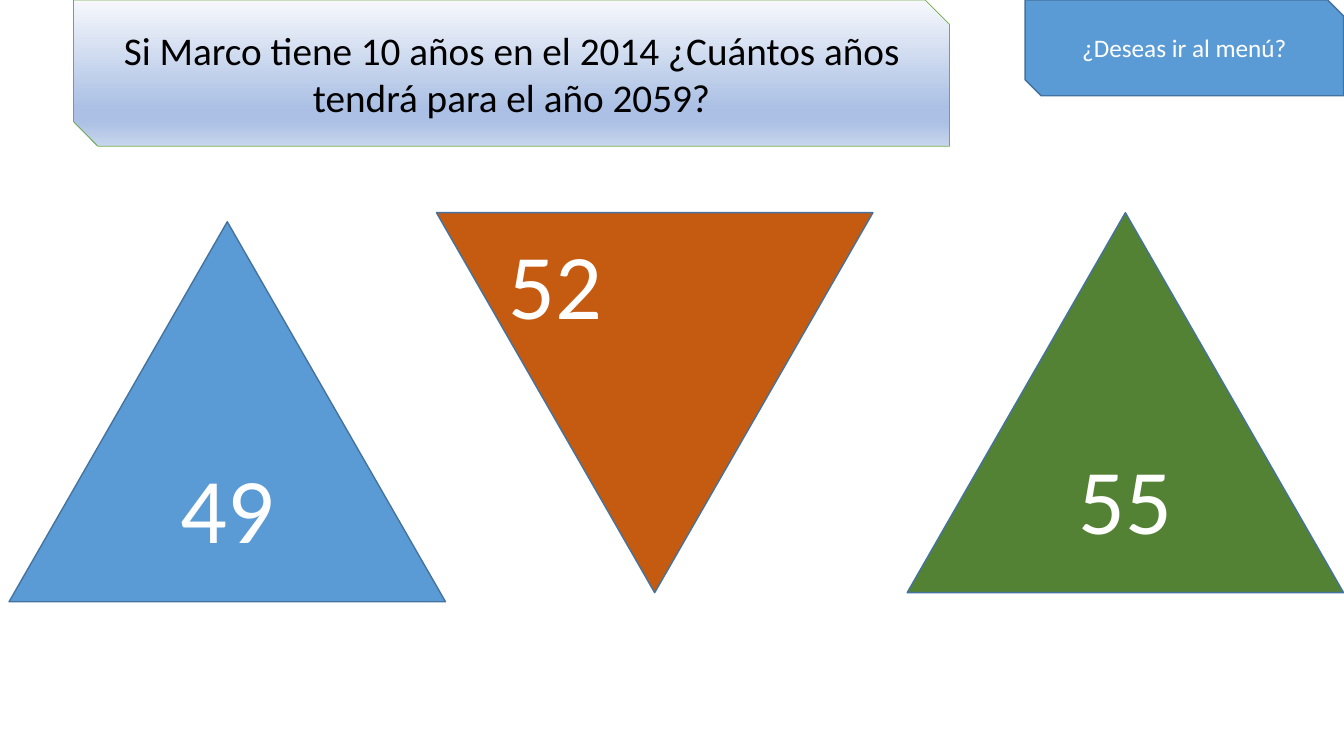
"""Build a multiple-choice question slide with three triangular answers."""
from copy import deepcopy
from dataclasses import dataclass

from pptx import Presentation
from pptx.dml.color import RGBColor
from pptx.enum.shapes import MSO_SHAPE
from pptx.enum.text import MSO_ANCHOR, MSO_AUTO_SIZE, PP_ALIGN
from pptx.oxml.ns import qn
from pptx.shapes.autoshape import Shape
from pptx.slide import Slide
from pptx.text.text import TextFrame
from pptx.util import Pt

FONT = "Calibri"
WHITE = "FFFFFF"
BLUE = "5B9BD5"
OUTLINE = "43739E"
ANSWER_SIZE = 66
TRIANGLE_WIDTH, TRIANGLE_HEIGHT = 311.76, 271.44
QUESTION_STOPS = ((0, "F6F8FC"), (0.74, "ABC0E4"), (0.83, "ABC0E4"), (1, "C7D5ED"))


@dataclass(frozen=True)
class Panel:
    """A filled shape with an optional centred label."""

    preset: MSO_SHAPE
    left: float
    top: float
    width: float
    height: float
    fill: str
    label: str = ""
    size: float = ANSWER_SIZE
    ink: str = WHITE
    line: str = OUTLINE
    line_width: float = 1
    rotation: float = 0


def triangle(left: float, top: float, fill: str, label: str = "", rotation: float = 0) -> Panel:
    """Describe one answer triangle."""
    return Panel(MSO_SHAPE.ISOSCELES_TRIANGLE, left, top, TRIANGLE_WIDTH, TRIANGLE_HEIGHT,
                 fill, label, rotation=rotation)


QUESTION = Panel(
    MSO_SHAPE.SNIP_2_DIAG_RECTANGLE, 52.56, 0, 625.68, 104.4, "ABC0E4",
    "Si Marco tiene 10 años en el 2014 ¿Cuántos años tendrá para el año 2059?",
    28, "000000", "70AD47", 0.5)
ANSWER_49 = triangle(6.48, 158.4, BLUE, "49")
ANSWER_52 = triangle(311.76, 151.92, "C55A11", rotation=180)
ANSWER_55 = triangle(648, 151.92, "548235", "55")
MENU = Panel(MSO_SHAPE.SNIP_2_DIAG_RECTANGLE, 732.24, 0, 227.52, 68.4, BLUE,
             "¿Deseas ir al menú?", 18)


def color(value: str) -> RGBColor:
    """Convert a hex string to a colour."""
    return RGBColor.from_string(value)


def write(frame: TextFrame, text: str, size: float, ink: str, align: PP_ALIGN) -> None:
    """Set and format the text of a frame."""
    frame.word_wrap = True
    frame.text = text
    for paragraph in frame.paragraphs:
        paragraph.alignment = align
        for run in paragraph.runs:
            run.font.name = FONT
            run.font.size = Pt(size)
            run.font.color.rgb = color(ink)


def draw_panel(slide: Slide, panel: Panel) -> Shape:
    """Draw a panel with its label."""
    shape = slide.shapes.add_shape(panel.preset, Pt(panel.left), Pt(panel.top),
                                   Pt(panel.width), Pt(panel.height))
    shape.rotation = panel.rotation
    shape.shadow.inherit = False
    shape.fill.solid()
    shape.fill.fore_color.rgb = color(panel.fill)
    shape.line.color.rgb = color(panel.line)
    shape.line.width = Pt(panel.line_width)
    if panel.label:
        shape.text_frame.vertical_anchor = MSO_ANCHOR.MIDDLE
        write(shape.text_frame, panel.label, panel.size, panel.ink, PP_ALIGN.CENTER)
    return shape


def apply_gradient(shape: Shape, stops: tuple[tuple[float, str], ...]) -> None:
    """Fill a shape with a gradient running from top to bottom."""
    shape.fill.gradient()
    shape.fill.gradient_angle = 270
    stop_list = shape.element.spPr.find(qn("a:gradFill")).find(qn("a:gsLst"))
    while len(stop_list) < len(stops):
        stop_list.append(deepcopy(stop_list[0]))
    for gradient_stop, (position, value) in zip(shape.fill.gradient_stops, stops):
        gradient_stop.position = position
        gradient_stop.color.rgb = color(value)


def main() -> None:
    """Create and save the slide."""
    presentation = Presentation()
    presentation.slide_width, presentation.slide_height = Pt(960), Pt(540)
    slide = presentation.slides.add_slide(presentation.slide_layouts[6])

    apply_gradient(draw_panel(slide, QUESTION), QUESTION_STOPS)
    draw_panel(slide, ANSWER_49)
    draw_panel(slide, ANSWER_52)
    answer_52_label = slide.shapes.add_textbox(Pt(356.4), Pt(158.4), Pt(222.48), Pt(87.12))
    write(answer_52_label.text_frame, "52", ANSWER_SIZE, WHITE, PP_ALIGN.LEFT)
    answer_52_label.text_frame.auto_size = MSO_AUTO_SIZE.SHAPE_TO_FIT_TEXT
    draw_panel(slide, ANSWER_55)
    draw_panel(slide, MENU)

    presentation.save("out.pptx")


if __name__ == "__main__":
    main()
